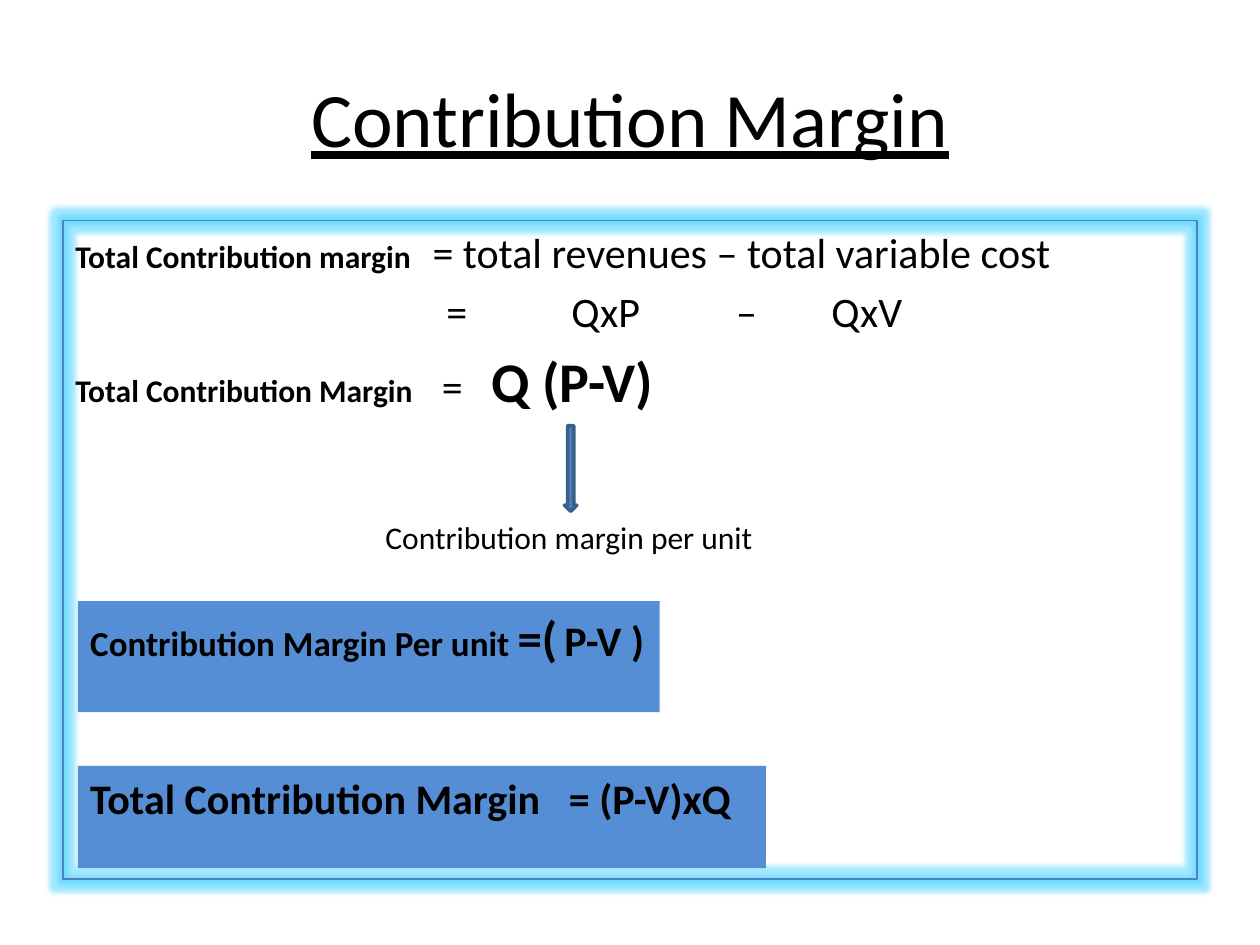
"""Build the Contribution Margin slide."""
import pptx
import pptx.dml.color
import pptx.enum.shapes
import pptx.enum.text
import pptx.oxml
import pptx.util
from lxml import etree

Cm, Pt = pptx.util.Cm, pptx.util.Pt
SHAPE = pptx.enum.shapes.MSO_SHAPE
ALIGN = pptx.enum.text.PP_ALIGN
ANCHOR = pptx.enum.text.MSO_ANCHOR
NS = "http://schemas.openxmlformats.org/drawingml/2006/main"

TITLE = [([("Contribution Margin", 44, False)], 0, [])]
FORMULAS = [
    ([("Total Contribution margin", 18, True),
      ("\t= total revenues – total variable cost", 24, False)], 5, [7.2]),
    ([("\t=\tQxP\t–\tQxV", 24, False)], 5, [7.48, 10, 13.32, 15.24]),
    ([("Total Contribution Margin", 18, True), ("\t=\t", 24, False),
      ("Q (P-V)", 32, True)], 6, [7.39, 8.38]),
]
UNIT_LABEL = [([("Contribution margin per unit", 18, False)], 0, [])]
RESULTS = [
    ((1.57, 12.12, 11.73, 2.24),
     [([("Contribution Margin Per unit ", 20, True), ("=(", 28, True),
        (" ", 18, False), ("P-V )", 24, True)], 0, [])]),
    ((1.57, 15.44, 13.87, 2.06),
     [([("Total Contribution Margin\t= (P-V)xQ", 24, True)], 0, [9.65])]),
]


def color(value):
    return pptx.dml.color.RGBColor.from_string(value)


def write(holder, paragraphs, align=ALIGN.LEFT, anchor=ANCHOR.TOP, underline=False):
    frame = holder.text_frame
    frame.word_wrap = True
    frame.vertical_anchor = anchor
    for index, (runs, before, stops) in enumerate(paragraphs):
        paragraph = frame.add_paragraph() if index else frame.paragraphs[0]
        paragraph.alignment = align
        paragraph.space_before = Pt(before)
        if stops:
            tabs = etree.SubElement(paragraph._p.get_or_add_pPr(), f"{{{NS}}}tabLst")
            for stop in stops:
                etree.SubElement(tabs, f"{{{NS}}}tab", pos=str(Cm(stop)), algn="l")
        for text, size, bold in runs:
            run = paragraph.add_run()
            run.text = text
            run.font.name = "Calibri"
            run.font.size = Pt(size)
            run.font.bold = bold
            run.font.underline = underline
            run.font.color.rgb = color("000000")


def add_shape(slide, kind, box, fill=None, line=None, width=0):
    shape = slide.shapes.add_shape(kind, *map(Cm, box))
    shape.shadow.inherit = False
    if fill:
        shape.fill.solid()
        shape.fill.fore_color.rgb = color(fill)
    else:
        shape.fill.background()
    if line:
        shape.line.color.rgb = color(line)
        shape.line.width = Pt(width)
    else:
        shape.line.fill.background()
    return shape


def add_glow(shape, hue, radius, opacity):
    effects = shape._element.spPr.find(f"{{{NS}}}effectLst")
    effects.append(pptx.oxml.parse_xml(
        f'<a:glow xmlns:a="{NS}" rad="{Pt(radius)}"><a:srgbClr val="{hue}">'
        f'<a:alpha val="{opacity * 1000}"/></a:srgbClr></a:glow>'))


def main():
    deck = pptx.Presentation()
    deck.slide_width, deck.slide_height = Cm(25.4), Cm(19.05)
    slide = deck.slides.add_slide(deck.slide_layouts[6])

    title = slide.shapes.add_textbox(Cm(1.27), Cm(0.76), Cm(22.86), Cm(3.18))
    write(title, TITLE, ALIGN.CENTER, ANCHOR.MIDDLE, underline=True)

    formulas = add_shape(slide, SHAPE.RECTANGLE, (1.27, 4.44, 22.86, 13.28),
                         line="4F81BD", width=0.75)
    add_glow(formulas, "33CCFF", 5, 45)
    write(formulas, FORMULAS)

    add_shape(slide, SHAPE.DOWN_ARROW, (11.38, 8.58, 0.25, 1.73), "4F81BD", "3A5F8C", 2)
    unit_label = slide.shapes.add_textbox(Cm(7.42), Cm(10.31), Cm(8), Cm(1.02))
    write(unit_label, UNIT_LABEL, ALIGN.RIGHT)

    for box, result in RESULTS:
        write(add_shape(slide, SHAPE.RECTANGLE, box, "558ED5"), result)

    deck.save("out.pptx")


if __name__ == "__main__":
    main()
